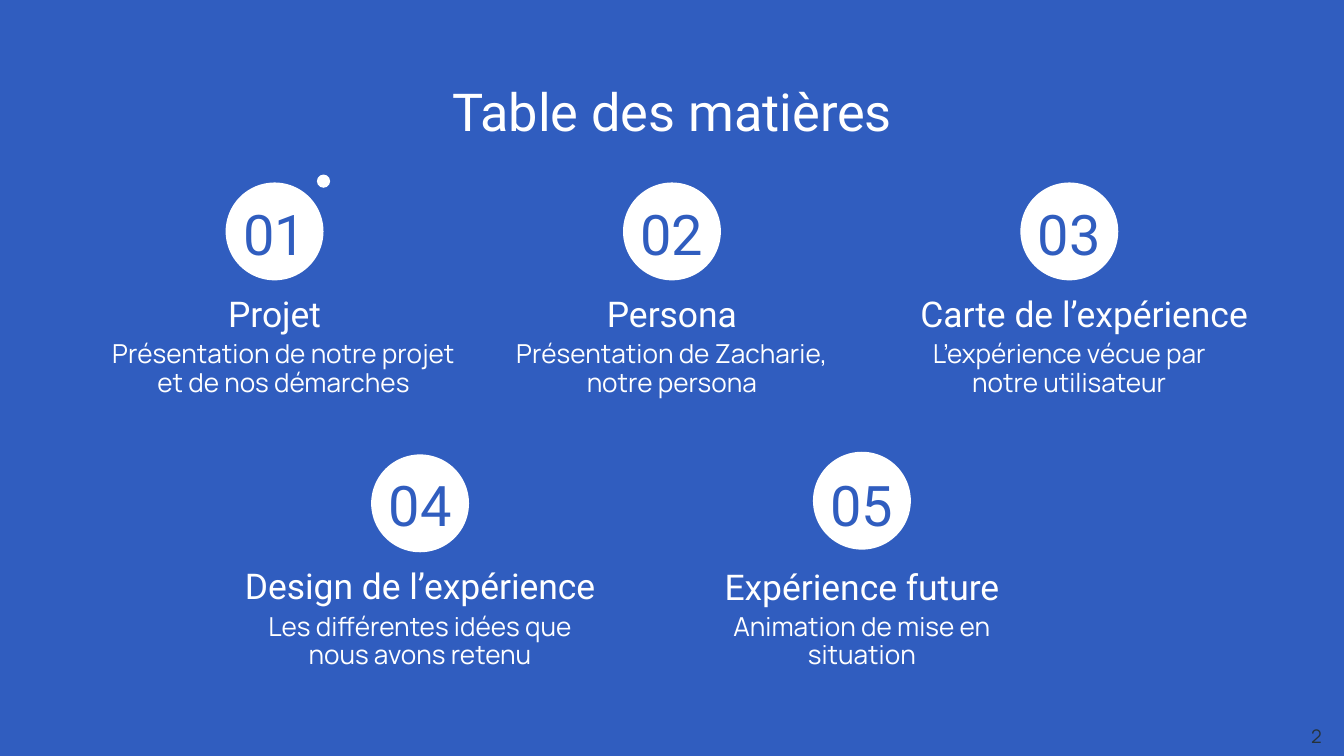
from dataclasses import dataclass

from pptx import Presentation
from pptx.dml.color import RGBColor
from pptx.enum.shapes import MSO_SHAPE as Shape
from pptx.enum.text import MSO_ANCHOR as Anchor, PP_ALIGN as Align
from pptx.util import Cm, Pt


@dataclass(frozen=True)
class Theme:
    blue: RGBColor = RGBColor.from_string("305DBF")
    white: RGBColor = RGBColor.from_string("FFFFFF")
    dark: RGBColor = RGBColor.from_string("263238")
    heading_font: str = "Roboto"
    body_font: str = "Manrope"
    title_size: int = 28
    number_size: int = 30
    heading_size: int = 19
    body_size: int = 14
    page_size: int = 10


@dataclass
class Section:
    """One entry; lengths in cm, shifts are relative to the circle's centre."""
    number: str
    heading: str
    description: str
    center: float
    circle_top: float
    number_top: float
    heading_top: float
    description_top: float
    heading_width: float = 6.73
    heading_shift: float = 0
    description_width: float = 6.73
    description_shift: float = 0


class SlideBuilder:
    INSET = 0.25
    DIAMETER = 1.85

    def __init__(self, slide, theme):
        self.slide = slide
        self.theme = theme
        background = slide.background.fill
        background.solid()
        background.fore_color.rgb = theme.blue

    def circle(self, left, top, diameter):
        disc = self.slide.shapes.add_shape(
            Shape.OVAL, Cm(left), Cm(top), Cm(diameter), Cm(diameter))
        disc.shadow.inherit = False
        disc.fill.solid()
        disc.fill.fore_color.rgb = self.theme.white
        disc.line.fill.background()

    def text(self, content, left, top, width, height, size, font, color,
             align=Align.CENTER, anchor=Anchor.TOP, spacing=1.0):
        box = self.slide.shapes.add_textbox(Cm(left), Cm(top), Cm(width), Cm(height))
        frame = box.text_frame
        frame.word_wrap = True
        frame.vertical_anchor = anchor
        frame.margin_left = frame.margin_right = Cm(self.INSET)
        frame.margin_top = frame.margin_bottom = Cm(self.INSET)
        frame.text = content
        paragraph = frame.paragraphs[0]
        paragraph.alignment = align
        paragraph.line_spacing = spacing
        style = paragraph.runs[0].font
        style.size = Pt(size)
        style.name = font
        style.color.rgb = color

    def title(self, content):
        theme = self.theme
        self.text(content, 0.86, 1.24, 23.68, 1.6,
                  theme.title_size, theme.heading_font, theme.white)

    def section(self, entry):
        theme = self.theme
        left = entry.center - self.DIAMETER / 2
        self.circle(left, entry.circle_top, self.DIAMETER)
        self.text(entry.number, left, entry.number_top, self.DIAMETER, self.DIAMETER,
                  theme.number_size, theme.heading_font, theme.blue, anchor=Anchor.BOTTOM)
        self.text(entry.heading,
                  entry.center + entry.heading_shift - entry.heading_width / 2,
                  entry.heading_top, entry.heading_width, 1.17,
                  theme.heading_size, theme.heading_font, theme.white)
        self.text(entry.description,
                  entry.center + entry.description_shift - entry.description_width / 2,
                  entry.description_top, entry.description_width, 1.85,
                  theme.body_size, theme.body_font, theme.white, spacing=0.9)

    def page_number(self, content):
        theme = self.theme
        # The left edge includes the 0.3 cm first-line indent.
        self.text(content, 24.53, 13.49, 1.53, 1.57, theme.page_size,
                  theme.body_font, theme.dark, align=Align.LEFT)


def main():
    deck = Presentation()
    deck.slide_width, deck.slide_height = Cm(25.4), Cm(14.29)
    builder = SlideBuilder(deck.slides.add_slide(deck.slide_layouts[6]), Theme())

    middle, pitch = 12.7, 7.51
    upper = dict(circle_top=3.45, number_top=3.45, heading_top=5.28, description_top=6.2)
    lower = dict(number_top=8.56, description_top=11.35)
    sections = [
        Section("01", "Projet", "Présentation de notre projet et de nos démarches",
                middle - pitch, **upper, description_width=7.06, description_shift=0.17),
        Section("02", "Persona", "Présentation de Zacharie, notre persona",
                middle, **upper),
        Section("03", "Carte de l’expérience", "L’expérience vécue par notre utilisateur",
                middle + pitch, **upper, heading_width=7.44, heading_shift=0.28),
        Section("04", "Design de l’expérience", "Les différentes idées que nous avons retenu",
                7.94, **lower, circle_top=8.59, heading_top=10.41, heading_width=7.87),
        Section("05", "Expérience future", "Animation de mise en situation",
                16.29, **lower, circle_top=8.54, heading_top=10.44),
    ]

    builder.title("Table des matières")
    for entry in sections:
        builder.section(entry)
    builder.circle(5.99, 3.3, 0.25)
    builder.page_number("2")
    deck.save("out.pptx")


if __name__ == "__main__":
    main()
